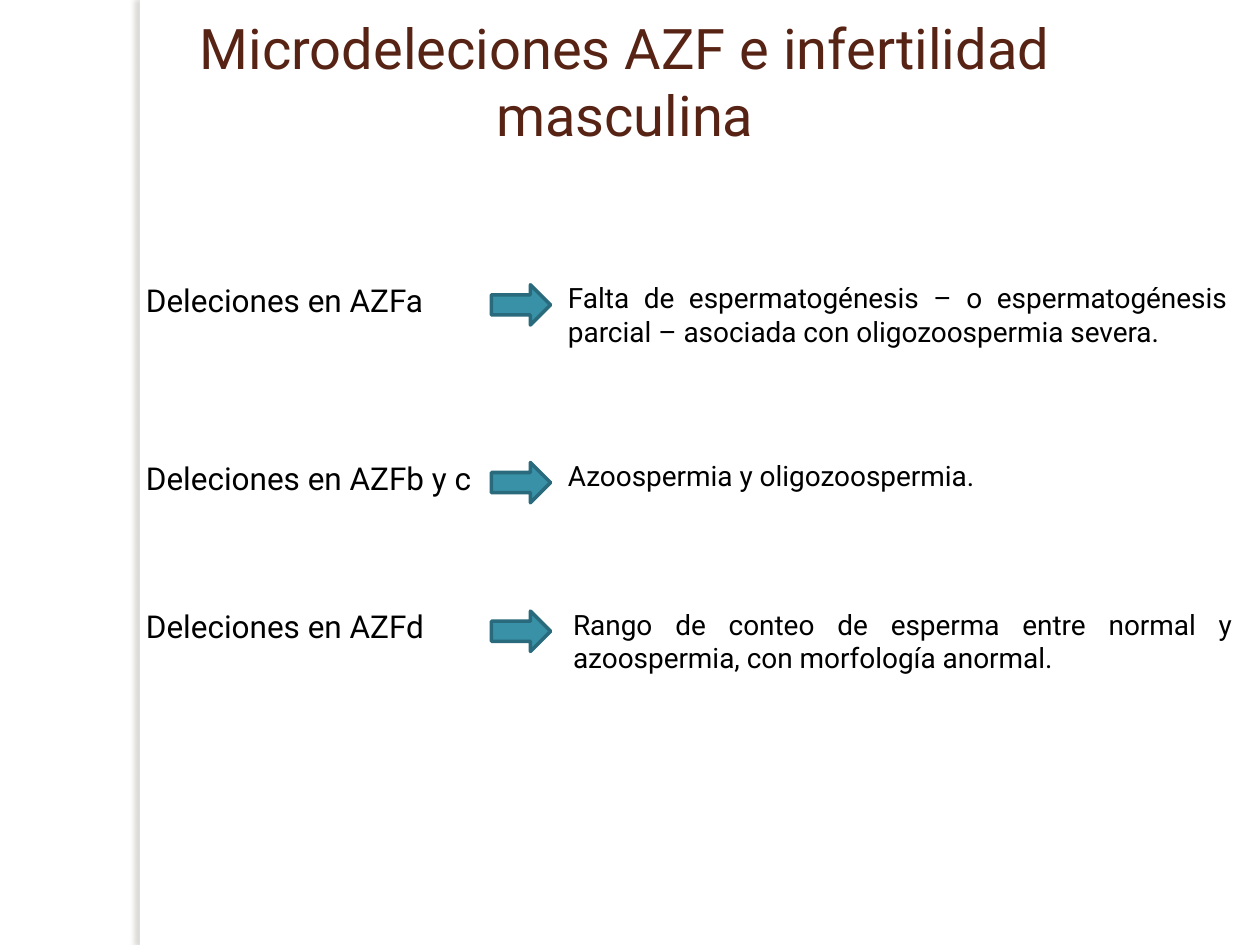
from lxml import etree
from pptx import Presentation
from pptx.dml.color import RGBColor as RGB
from pptx.enum.shapes import MSO_SHAPE as Shape
from pptx.enum.text import MSO_ANCHOR as Anchor, PP_ALIGN as Align
from pptx.oxml.ns import qn
from pptx.util import Inches, Pt

FONT = "Roboto"
COLORS = {
    "paper": "FFFFFF",
    "title": "572314",
    "text": "000000",
    "arrow": "3891A7",
    "edge": "296B7C",
    "shade": "736F63",
}
# Label, label width, finding, left of finding, top of row
ROWS = [
    ("Deleciones en AZFa", 2.44,
     "Falta de espermatogénesis – o espermatogénesis parcial – "
     "asociada con oligozoospermia severa.", 4.41, 2.18),
    ("Deleciones en AZFb y c", 2.84,
     "Azoospermia y oligozoospermia.", 4.41, 3.59),
    ("Deleciones en AZFd", 2.44,
     "Rango de conteo de esperma entre normal y azoospermia, "
     "con morfología anormal.", 4.45, 4.77),
]


def color(name):
    return RGB.from_string(COLORS[name])


def add_text(slide, text, box, size, tone="text", align=Align.LEFT):
    frame = slide.shapes.add_textbox(*map(Inches, box)).text_frame
    frame.word_wrap = True
    frame.vertical_anchor = Anchor.TOP
    para = frame.paragraphs[0]
    para.text = text
    para.alignment = align
    font = para.font
    font.name, font.size = FONT, Pt(size)
    font.color.rgb = color(tone)


def add_solid(slide, kind, box, fill):
    shape = slide.shapes.add_shape(kind, *map(Inches, box))
    shape.shadow.inherit = False
    shape.fill.solid()
    shape.fill.fore_color.rgb = color(fill)
    return shape


def add_strip(slide, box):
    """White strip that casts a soft shadow to its left."""
    strip = add_solid(slide, Shape.RECTANGLE, box, "paper")
    strip.line.fill.background()
    effects = strip.element.spPr.find(qn("a:effectLst"))
    shade = etree.SubElement(
        effects, qn("a:outerShdw"), blurRad=str(Pt(3)), dist=str(Pt(3)),
        dir=str(180 * 60000), algn="tl", rotWithShape="0")
    tone = etree.SubElement(shade, qn("a:srgbClr"), val=COLORS["shade"])
    etree.SubElement(tone, qn("a:alpha"), val="25000")


def add_row(slide, left, top, label, width, finding, start):
    """Deletion, arrow and finding, side by side."""
    add_text(slide, label, (left, top, width, 0.4), 18)
    add_text(slide, finding, (start, top, 5.43, 0.64), 16,
             align=Align.JUSTIFY)
    arrow = add_solid(slide, Shape.RIGHT_ARROW,
                      (left + 2.84, top + 0.08, 0.47, 0.32), "arrow")
    arrow.line.color.rgb = color("edge")
    arrow.line.width = Pt(2)


def main():
    deck = Presentation()
    deck.slide_width, deck.slide_height = Inches(10), Inches(7.5)
    slide = deck.slides.add_slide(deck.slide_layouts[6])
    slide.background.fill.solid()
    slide.background.fill.fore_color.rgb = color("paper")

    # Side strip and title
    add_strip(slide, (1.11, 0, 0.08, 7.5))
    add_text(slide, "Microdeleciones AZF e infertilidad masculina",
             (1.22, 0.06, 7.48, 0.78), 32, "title", Align.CENTER)

    # Deletions and their findings
    for label, width, finding, start, top in ROWS:
        add_row(slide, 1.06, top, label, width, finding, start)

    deck.save("out.pptx")


if __name__ == "__main__":
    main()
